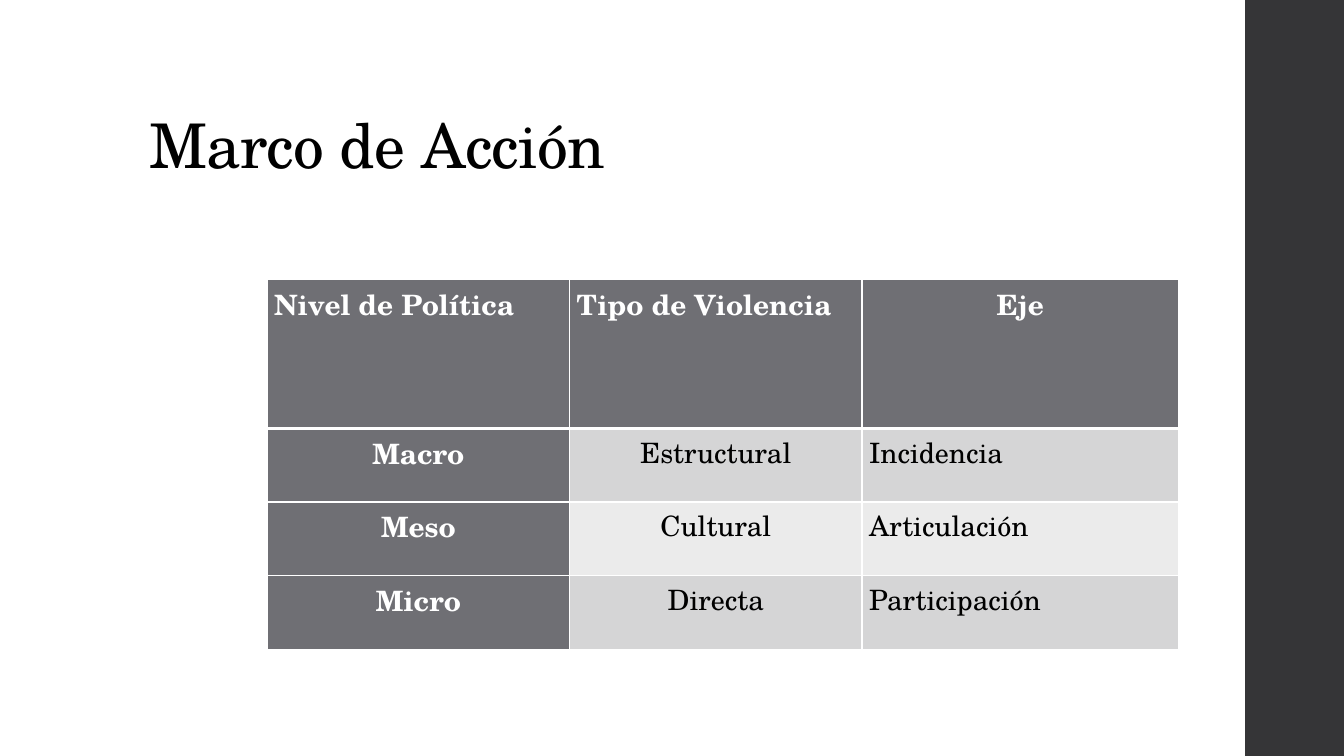
"""Build the "Marco de Acción" slide with its policy level table."""
import pptx
import pptx.dml.color
import pptx.enum.shapes
import pptx.enum.text
import pptx.oxml
import pptx.oxml.ns
import pptx.util
from pptx.util import Inches

FONT = "TeX Gyre Schola"
COLORS = {"ink": "000000", "paper": "FFFFFF", "sidebar": "353537",
          "heading": "6F6F74", "odd": "D5D5D6", "even": "EBEBEB"}
LEFT = pptx.enum.text.PP_ALIGN.LEFT
CENTER = pptx.enum.text.PP_ALIGN.CENTER
COLUMN_WIDTHS = (3, 2.9, 3.14)
ROW_HEIGHTS = (1.48, 0.73, 0.73, 0.73)
LEVELS = (("Nivel de Política", "Tipo de Violencia", "Eje"),
          ("Macro", "Estructural", "Incidencia"),
          ("Meso", "Cultural", "Articulación"),
          ("Micro", "Directa", "Participación"))
HEADER_ALIGNMENTS = (LEFT, LEFT, CENTER)
BODY_ALIGNMENTS = (CENTER, CENTER, LEFT)


def rgb(name):
    """Return the named colour."""
    return pptx.dml.color.RGBColor.from_string(COLORS[name])


def apply(target, formats):
    """Set each attribute of the target from the format values."""
    for attribute, value in formats.items():
        setattr(target, attribute, value)


def write(frame, text, color, size, bold, align, spacing):
    """Write one formatted paragraph and return its run."""
    paragraph = frame.paragraphs[0]
    apply(paragraph, {"alignment": align, "line_spacing": spacing})
    run = paragraph.add_run()
    run.text = text
    apply(run.font, {"name": FONT, "size": pptx.util.Pt(size), "bold": bold})
    run.font.color.rgb = rgb(color)
    return run


def add_sidebar(slide):
    """Add the dark band at the right edge."""
    sidebar = slide.shapes.add_shape(
        pptx.enum.shapes.MSO_SHAPE.RECTANGLE,
        Inches(12.35), Inches(0), Inches(1), Inches(7.5))
    sidebar.shadow.inherit = False
    sidebar.fill.solid()
    sidebar.fill.fore_color.rgb = rgb("sidebar")
    sidebar.line.fill.background()


def add_title(slide, text):
    """Add the slide title, anchored at the bottom."""
    title = slide.shapes.add_textbox(Inches(1.38), Inches(0.4), Inches(10.6), Inches(1.45))
    apply(title.text_frame, {"word_wrap": True,
                             "vertical_anchor": pptx.enum.text.MSO_ANCHOR.BOTTOM})
    run = write(title.text_frame, text, "ink", 44, False, LEFT, 0.9)
    run.font._element.set("spc", "-50")


def set_borders(cell, bottom_points):
    """Draw white lines around a cell."""
    properties = cell._tc.get_or_add_tcPr()
    widths = {"lnL": 1, "lnR": 1, "lnT": 1, "lnB": bottom_points}
    for position, (edge, points) in enumerate(widths.items()):
        properties.insert(position, pptx.oxml.parse_xml(
            f'<a:{edge} {pptx.oxml.ns.nsdecls("a")} w="{pptx.util.Pt(points)}">'
            f'<a:solidFill><a:srgbClr val="{COLORS["paper"]}"/></a:solidFill></a:{edge}>'))


def fill_cell(cell, text, row, column):
    """Format a cell by its place in the table and write its text."""
    is_heading = row == 0 or column == 0
    band = "odd" if row % 2 else "even"
    apply(cell, {"margin_left": Inches(0.07), "margin_right": Inches(0.07),
                 "margin_top": 0, "margin_bottom": 0})
    cell.fill.solid()
    cell.fill.fore_color.rgb = rgb("heading" if is_heading else band)
    set_borders(cell, 3 if row == 0 else 1)
    alignments = BODY_ALIGNMENTS if row else HEADER_ALIGNMENTS
    write(cell.text_frame, text, "paper" if is_heading else "ink",
          20, is_heading, alignments[column], 1.07)


def add_level_table(slide):
    """Add the table of policy levels, violence types and axes."""
    levels = slide.shapes.add_table(
        len(ROW_HEIGHTS), len(COLUMN_WIDTHS), Inches(2.65), Inches(2.77),
        Inches(sum(COLUMN_WIDTHS)), Inches(sum(ROW_HEIGHTS))).table
    levels.first_col = True
    for column, width in zip(levels.columns, COLUMN_WIDTHS):
        column.width = Inches(width)
    for row, height in zip(levels.rows, ROW_HEIGHTS):
        row.height = Inches(height)
    for row, texts in enumerate(LEVELS):
        for column, text in enumerate(texts):
            fill_cell(levels.cell(row, column), text, row, column)


def main():
    """Build and save the presentation."""
    presentation = pptx.Presentation()
    apply(presentation, {"slide_width": Inches(13.33), "slide_height": Inches(7.5)})
    slide = presentation.slides.add_slide(presentation.slide_layouts[6])
    add_sidebar(slide)
    add_title(slide, "Marco de Acción")
    add_level_table(slide)
    presentation.save("out.pptx")


if __name__ == "__main__":
    main()
